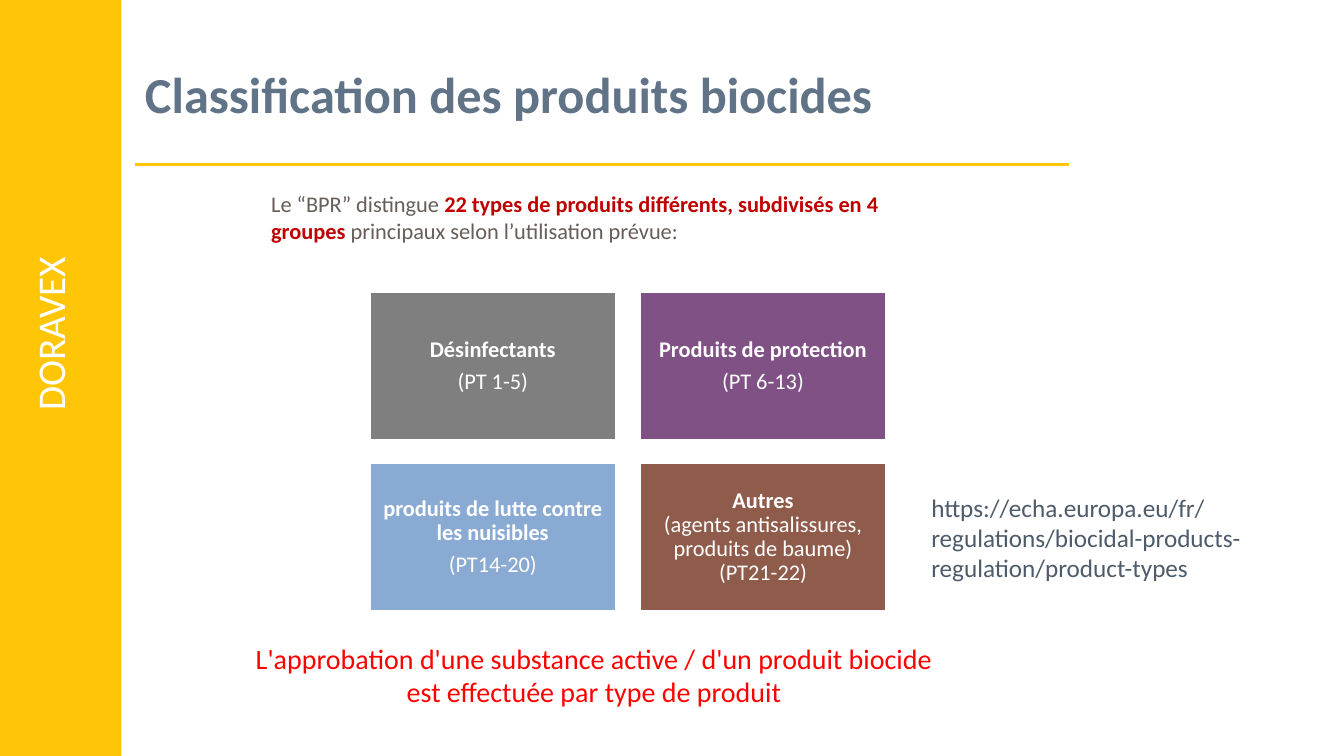
from lxml.etree import SubElement
from pptx import Presentation
from pptx.dml.color import RGBColor
from pptx.enum.shapes import MSO_CONNECTOR, MSO_SHAPE
from pptx.enum.text import MSO_ANCHOR, MSO_AUTO_SIZE, PP_ALIGN
from pptx.oxml.ns import qn
from pptx.util import Cm, Pt

YELLOW, WHITE = "FFC608", "FFFFFF"
CARD_LEFT, CARD_TOP = 9.32, 7.37
CARD_WIDTH, CARD_HEIGHT = 6.2, 3.71
COLUMN_STEP, ROW_STEP = 6.81, 4.31

# Each card: fill, then paragraphs made of (text, bold) spans
CARDS = [
    ("7F7F7F", [[("Désinfectants", True)], [("(PT 1-5)", False)]]),
    ("7F5185", [[("Produits de protection", True)], [("(PT 6-13)", False)]]),
    ("89AAD3", [[("produits de lutte contre les nuisibles", True)],
                [("(PT14-20)", False)]]),
    ("8F5B4B", [[("Autres\n", True),
                 ("(agents antisalissures, produits de baume)\n(PT21-22)", False)]]),
]


def colour(value):
    return RGBColor.from_string(value)


class SlideBuilder:
    """Holds the text style and the slide being filled."""

    font_name = "Calibri"

    def __init__(self, page):
        self.page = page

    def style(self, para, size, text_colour, align=PP_ALIGN.LEFT):
        para.alignment = align
        para.font.name = self.font_name
        para.font.size = Pt(size)
        para.font.color.rgb = colour(text_colour)

    def place(self, shape, left, top, width, height):
        shape.left, shape.top = Cm(left), Cm(top)
        shape.width, shape.height = Cm(width), Cm(height)

    def add_spans(self, para, spans):
        """Add (text, bold) spans; a newline becomes a line break."""
        for text, bold in spans:
            for index, line in enumerate(text.split("\n")):
                if index:
                    para.add_line_break()
                if line:
                    span = para.add_run()
                    span.text = line
                    span.font.bold = bold

    def rectangle(self, left, top, width, height, fill, outline=None):
        shape = self.page.shapes.add_shape(
            MSO_SHAPE.RECTANGLE, Cm(left), Cm(top), Cm(width), Cm(height))
        shape.shadow.inherit = False
        shape.fill.solid()
        shape.fill.fore_color.rgb = colour(fill)
        if outline:
            shape.line.color.rgb = colour(outline)
            shape.line.width = Pt(1.25)
        else:
            shape.line.fill.background()
        return shape

    def rule(self, left, top, right, line_colour, width):
        line = self.page.shapes.add_connector(
            MSO_CONNECTOR.STRAIGHT, Cm(left), Cm(top), Cm(right), Cm(top))
        line.line.color.rgb = colour(line_colour)
        line.line.width = Pt(width)
        SubElement(line.element.spPr, qn("a:effectLst"))

    def text(self, left, top, width, height, words, size, text_colour,
             align=PP_ALIGN.LEFT):
        box = self.page.shapes.add_textbox(
            Cm(left), Cm(top), Cm(width), Cm(height))
        box.text_frame.word_wrap = True
        box.text_frame.text = words
        self.style(box.text_frame.paragraphs[0], size, text_colour, align)
        return box

    def vertical_text(self, *arguments):
        box = self.text(*arguments, align=PP_ALIGN.CENTER)
        box.element.xpath(".//a:bodyPr")[0].set("vert", "vert270")

    def title(self, words):
        title = self.page.shapes.title
        self.place(title, 3.4, 0.76, 23.55, 3.18)
        title.text_frame.text = words
        title.text_frame.vertical_anchor = MSO_ANCHOR.MIDDLE
        para = title.text_frame.paragraphs[0]
        self.style(para, 36, "617387")
        para.font.bold = True

    def introduction(self, spans, highlight):
        body = self.page.placeholders[1]
        self.place(body, 6.58, 4.67, 16.76, 1.63)
        body.text_frame.auto_size = MSO_AUTO_SIZE.NONE
        para = body.text_frame.paragraphs[0]
        properties = para._p.get_or_add_pPr()
        properties.set("marL", "0")
        properties.set("indent", "0")
        SubElement(properties, qn("a:buNone"))
        para.space_before = Pt(0)
        self.style(para, 16, "675D59")
        self.add_spans(para, spans)
        for span in para.runs:
            if span.font.bold:
                span.font.color.rgb = colour(highlight)

    def card(self, left, top, fill, paragraphs):
        shape = self.rectangle(left, top, CARD_WIDTH, CARD_HEIGHT, fill, WHITE)
        frame = shape.text_frame
        frame.word_wrap = True
        frame.vertical_anchor = MSO_ANCHOR.MIDDLE
        frame.margin_left = frame.margin_right = Cm(0.18)
        frame.margin_top = frame.margin_bottom = Cm(0.18)
        for index, spans in enumerate(paragraphs):
            para = frame.add_paragraph() if index else frame.paragraphs[0]
            para.line_spacing = 0.9
            para.space_after = Pt(5.6)
            self.style(para, 16, WHITE, PP_ALIGN.CENTER)
            self.add_spans(para, spans)


def main():
    deck = Presentation()
    deck.slide_width, deck.slide_height = Cm(33.87), Cm(19.05)
    builder = SlideBuilder(deck.slides.add_slide(deck.slide_layouts[1]))

    builder.rectangle(0, 0, 3.06, 19.05, YELLOW)
    builder.vertical_text(0.53, 5.59, 1.7, 5.64, "DORAVEX", 28, WHITE)
    builder.rule(3.4, 4.14, 26.95, YELLOW, 2.25)
    builder.title("Classification des produits biocides")
    builder.introduction([
        ("Le “BPR” distingue ", False),
        ("22 types de produits différents, subdivisés en 4 groupes", True),
        (" principaux selon l’utilisation prévue:", False),
    ], "C00000")

    for index, (fill, paragraphs) in enumerate(CARDS):
        row, column = divmod(index, 2)
        builder.card(CARD_LEFT + column * COLUMN_STEP,
                     CARD_TOP + row * ROW_STEP, fill, paragraphs)

    builder.text(6.17, 16.03, 17.6, 1.96,
                 "L'approbation d'une substance active / d'un produit biocide "
                 "est effectuée par type de produit",
                 20, "FF0000", PP_ALIGN.CENTER)
    builder.text(23.22, 12.27, 9.78, 2.57,
                 "https://echa.europa.eu/fr/regulations/"
                 "biocidal-products-regulation/product-types", 18, "4D5B6B")
    deck.save("out.pptx")


if __name__ == "__main__":
    main()
